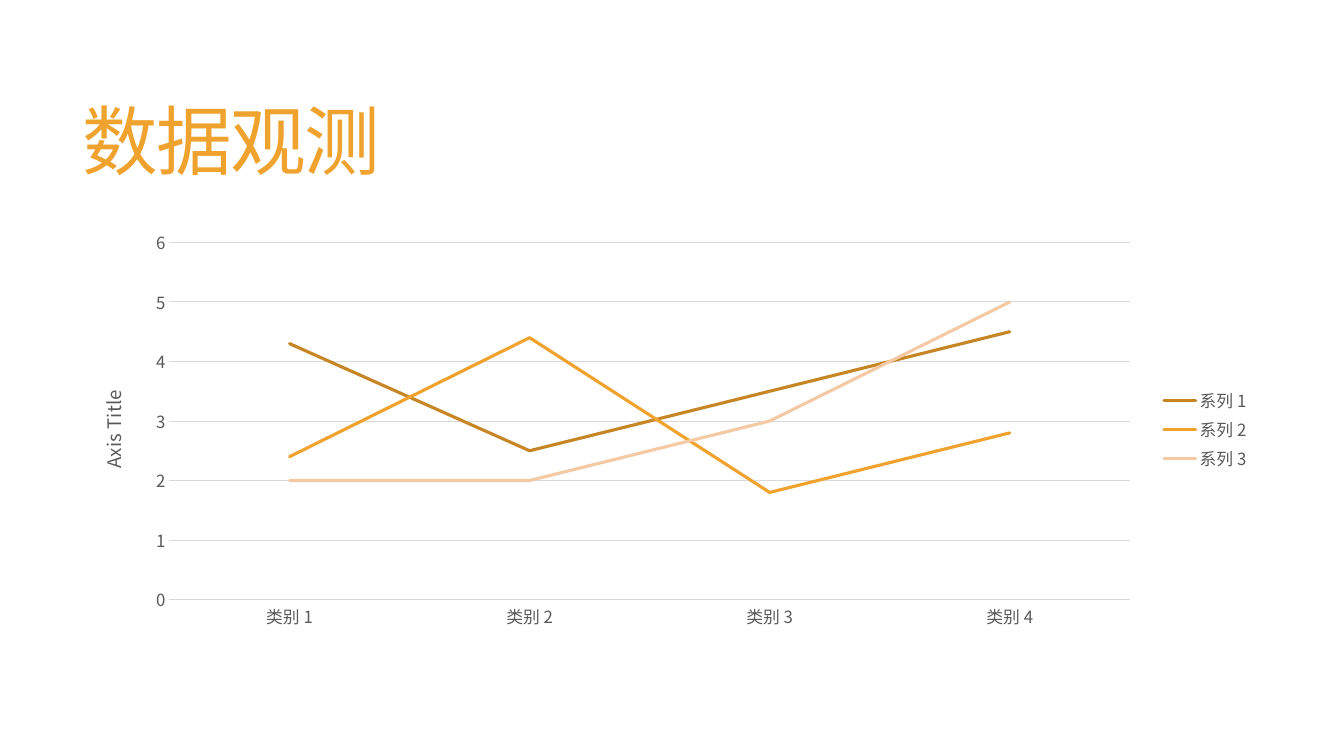
from lxml import etree
from pptx import Presentation
from pptx.chart.data import CategoryChartData
from pptx.dml.color import RGBColor
from pptx.enum.chart import XL_CHART_TYPE as ChartType, XL_LEGEND_POSITION as LegendPosition
from pptx.enum.chart import XL_MARKER_STYLE as MarkerStyle, XL_TICK_MARK as TickMark
from pptx.enum.text import MSO_ANCHOR as Anchor, PP_ALIGN as Align
from pptx.oxml.ns import qn
from pptx.util import Inches, Pt

FONT = "Noto Sans CJK SC"
ORANGE, GRAY, GRID = "F0A22E", "595959", "D9D9D9"


def style_font(font, size, color):
    font.name = FONT
    font.size = Pt(size)
    font.bold = False
    font.color.rgb = RGBColor.from_string(color)


def style_line(line, color, width):
    line.color.rgb = RGBColor.from_string(color)
    line.width = Pt(width)


deck = Presentation()
deck.slide_width, deck.slide_height = Inches(13.33), Inches(7.5)
page = deck.slides.add_slide(deck.slide_layouts[5])

title = page.shapes.title
title.left, title.top = Inches(0.72), Inches(0.55)
title.width, title.height = Inches(11.78), Inches(1.81)
title.text_frame.vertical_anchor = Anchor.MIDDLE
para = title.text_frame.paragraphs[0]
para.alignment = Align.LEFT
para.line_spacing = 0.85
span = para.add_run()
span.text = "数据观测"
style_font(span.font, 54, ORANGE)
for properties in title.element.iter(qn("a:rPr")):
    properties.set("spc", "-120")

series_rows = [
    ("系列 1", (4.3, 2.5, 3.5, 4.5), "C78626"),
    ("系列 2", (2.4, 4.4, 1.8, 2.8), ORANGE),
    ("系列 3", (2, 2, 3, 5), "F5C9A4"),
]
data = CategoryChartData()
data.categories = [f"类别 {number}" for number in range(1, 5)]
for name, values, color in series_rows:
    data.add_series(name, values)

chart = page.shapes.add_chart(
    ChartType.LINE, Inches(0.74), Inches(2.2), Inches(11.76), Inches(4.12), data
).chart
chart.has_title = False
style_font(chart.font, 10, "000000")
chart.plots[0].vary_by_categories = False
for series, (name, values, color) in zip(chart.plots[0].series, series_rows):
    series.smooth = False
    series.marker.style = MarkerStyle.NONE
    style_line(series.format.line, color, 2.25)
    for outline in series.format.line.fill and series._element.iter(qn("a:ln")):
        outline.set("cap", "rnd")

chart.has_legend = True
chart.legend.position = LegendPosition.RIGHT
chart.legend.include_in_layout = False
style_font(chart.legend.font, 12, GRAY)

categories, scale = chart.category_axis, chart.value_axis
for axis in (categories, scale):
    axis.major_tick_mark = axis.minor_tick_mark = TickMark.NONE
    style_font(axis.tick_labels.font, 12, GRAY)
style_line(categories.format.line, GRID, 0.75)
scale.format.line.fill.background()
scale.minimum_scale, scale.maximum_scale, scale.major_unit = 0, 6, 1
scale.has_major_gridlines = True
style_line(scale.major_gridlines.format.line, GRID, 0.75)
scale.has_title = True
span = scale.axis_title.text_frame.paragraphs[0].add_run()
span.text = "Axis Title"
style_font(span.font, 13.3, GRAY)
for body in scale.axis_title.element.iter(qn("a:bodyPr")):
    body.set("rot", "-5400000")
    body.set("vert", "horz")

plot_area = chart.element.find(".//" + qn("c:plotArea"))
for layout in plot_area.findall(qn("c:layout")):
    plot_area.remove(layout)
layout = etree.Element(qn("c:layout"))
plot_area.insert(0, layout)
manual = etree.SubElement(layout, qn("c:manualLayout"))
for tag, value in [
    ("layoutTarget", "inner"), ("xMode", "edge"), ("yMode", "edge"),
    ("x", "0.08"), ("y", "0.05"), ("w", "0.81"), ("h", "0.86"),
]:
    etree.SubElement(manual, qn(f"c:{tag}")).set("val", value)

for root in (title.element, chart.element):
    for latin in list(root.iter(qn("a:latin"))):
        east_asian = etree.Element(qn("a:ea"))
        east_asian.set("typeface", FONT)
        latin.addnext(east_asian)

deck.save("out.pptx")
